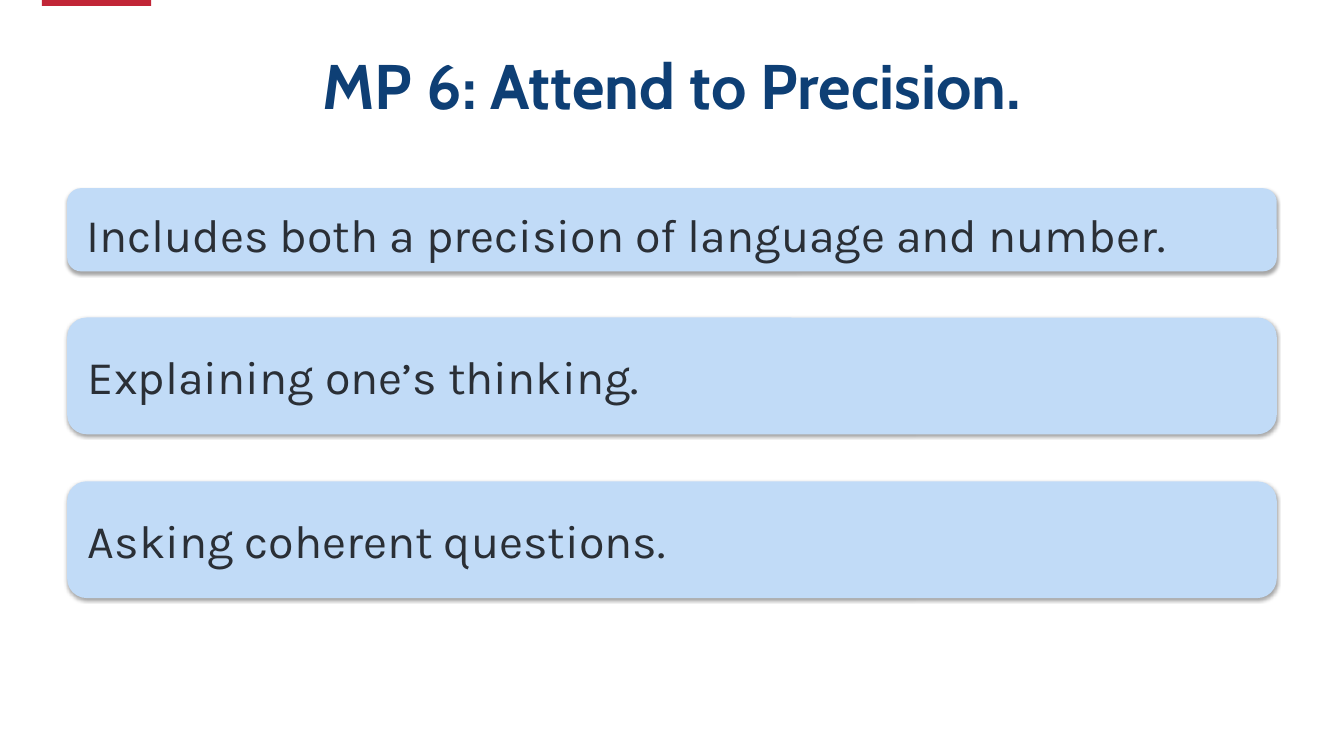
import pptx
import pptx.util
import pptx.dml.color
import pptx.enum.shapes
import pptx.enum.text
import pptx.oxml
import pptx.oxml.ns

Inches = pptx.util.Inches
Pt = pptx.util.Pt
Kind = pptx.enum.shapes.MSO_SHAPE
Align = pptx.enum.text.PP_ALIGN
Anchor = pptx.enum.text.MSO_ANCHOR

hues = {"red": "C12637", "navy": "0E3F75", "sky": "C1DBF7", "ink": "2A2F36"}
shade = (
    f'<a:effectLst {pptx.oxml.ns.nsdecls("a")}>'
    f'<a:outerShdw blurRad="{Pt(3.1)}" dist="{Pt(1.8)}" dir="5400000" rotWithShape="0">'
    '<a:srgbClr val="000000"><a:alpha val="35000"/></a:srgbClr>'
    '</a:outerShdw></a:effectLst>'
)


def write(shape, text, size, face, hue, bold=False, align=Align.LEFT,
          anchor=Anchor.MIDDLE, space=1.0, pad=(0.1, 0.05), indent=0):
    frame = shape.text_frame
    frame.word_wrap = True
    frame.auto_size = pptx.enum.text.MSO_AUTO_SIZE.NONE
    frame.vertical_anchor = anchor
    frame.margin_left = frame.margin_right = Inches(pad[0])
    frame.margin_top = frame.margin_bottom = Inches(pad[1])
    para = frame.paragraphs[0]
    para.alignment = align
    para.line_spacing = space
    para.space_before = Pt(0)
    props = para._p.get_or_add_pPr()
    props.set("marL", str(Inches(indent)))
    props.set("indent", "0")
    run = para.add_run()
    run.text = text
    run.font.size = Pt(size)
    run.font.name = face
    run.font.bold = bold
    run.font.color.rgb = pptx.dml.color.RGBColor.from_string(hues[hue])


def block(kind, left, top, width, height, hue):
    shape = slide.shapes.add_shape(
        kind, Inches(left), Inches(top), Inches(width), Inches(height))
    shape.shadow.inherit = False
    shape.fill.solid()
    shape.fill.fore_color.rgb = pptx.dml.color.RGBColor.from_string(hues[hue])
    shape.line.fill.background()
    return shape


deck = pptx.Presentation()
deck.slide_width = Inches(16)
deck.slide_height = Inches(9)
slide = deck.slides.add_slide(deck.slide_layouts[5])

block(Kind.RECTANGLE, 0.5, -0.05, 1.3, 0.12, "red")

title = slide.shapes.title
title.left, title.top = Inches(0), Inches(0.6)
title.width, title.height = Inches(16), Inches(1.48)
write(title, "MP 6: Attend to Precision.", 54, "Cabin", "navy", bold=True,
      align=Align.CENTER, anchor=Anchor.TOP, space=0.9, pad=(0.12, 0.06))

cards = [
    ("Includes both a precision of language and number.", 2.24, 0.99, 1.15),
    ("Explaining one’s thinking.", 3.78, 1.39, 1.0),
    ("Asking coherent questions.", 5.73, 1.39, 1.0),
]
for text, top, height, space in cards:
    card = block(Kind.ROUNDED_RECTANGLE, 0.8, top, 14.4, height, "sky")
    props = card._element.spPr
    props.replace(props.find(pptx.oxml.ns.qn("a:effectLst")), pptx.oxml.parse_xml(shade))
    write(card, text, 40, "Karla", "ink", space=space, indent=0.08)

deck.save("out.pptx")
